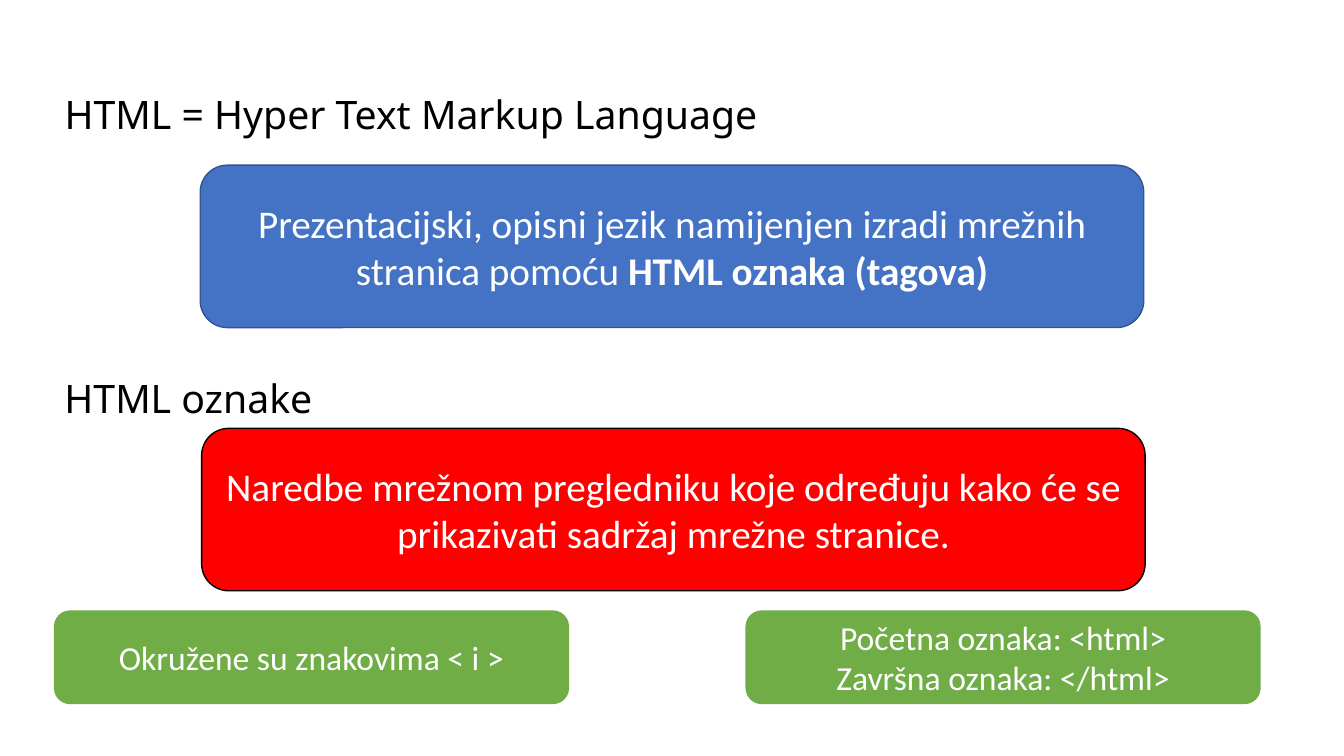
from pptx import Presentation
from pptx.dml.color import RGBColor
from pptx.enum.shapes import MSO_SHAPE
from pptx.enum.text import MSO_ANCHOR, MSO_AUTO_SIZE, PP_ALIGN
from pptx.util import Pt

# Content: paragraphs are lists of (text, bold) runs
TITLE = "HTML = Hyper Text Markup Language"
SUBTITLE = "HTML oznake"
DEFINITION = [[
    ("Prezentacijski, opisni jezik namijenjen izradi mrežnih stranica pomoću ", False),
    ("HTML oznaka (tagova)", True),
]]
TAGS = [[("Naredbe mrežnom pregledniku koje određuju kako će se "
          "prikazivati sadržaj mrežne stranice.", False)]]
BRACKETS = [[("Okružene su znakovima < i >", False)]]
EXAMPLES = [[("Početna oznaka: <html>", False)],
            [("Završna oznaka: </html>", False)]]

THEME = {
    "heading_font": "Noto Sans", "body_font": "Calibri",
    "large": 28, "small": 24,
    "ink": "000000", "white": "FFFFFF",
    "blue": "4472C4", "navy": "325491", "red": "FF0000", "green": "70AD47",
}

# Layout in points
SLIDE_W, SLIDE_H = 960, 540
LEFT = 39
HEADING_W, HEADING_H = 828, 44
TITLE_Y, SUBTITLE_Y = 65, 268
MAIN_W, MAIN_H = 674, 116
NOTE_W, NOTE_H, NOTE_Y = 367, 66, 436.5

# left, top, width, height, fill, line, size, paragraphs
CARDS = [
    (143, 118, MAIN_W, MAIN_H, "blue", "navy", "large", DEFINITION),
    (144, 306, MAIN_W, MAIN_H, "red", "ink", "large", TAGS),
    (LEFT, NOTE_Y, NOTE_W, NOTE_H, "green", "green", "small", BRACKETS),
    (533, NOTE_Y, NOTE_W, NOTE_H, "green", "green", "small", EXAMPLES),
]


def color(name):
    return RGBColor.from_string(THEME[name])


def style(p, font, size, ink, align):
    p.alignment = align
    p.font.name = THEME[font]
    p.font.size = Pt(THEME[size])
    p.font.color.rgb = color(ink)


def format_heading(sp, text, top):
    sp.left, sp.top = Pt(LEFT), Pt(top)
    sp.width, sp.height = Pt(HEADING_W), Pt(HEADING_H)
    tf = sp.text_frame
    tf.text = text
    tf.word_wrap = True
    tf.auto_size = MSO_AUTO_SIZE.NONE
    tf.vertical_anchor = MSO_ANCHOR.TOP
    p = tf.paragraphs[0]
    p.line_spacing = 0.9
    style(p, "heading_font", "large", "ink", PP_ALIGN.LEFT)


def add_card(s, left, top, width, height, fill, line, size, paragraphs):
    sp = s.shapes.add_shape(MSO_SHAPE.ROUNDED_RECTANGLE,
                            Pt(left), Pt(top), Pt(width), Pt(height))
    sp.shadow.inherit = False
    sp.fill.solid()
    sp.fill.fore_color.rgb = color(fill)
    sp.line.color.rgb = color(line)
    sp.line.width = Pt(1)
    tf = sp.text_frame
    tf.word_wrap = True
    tf.vertical_anchor = MSO_ANCHOR.MIDDLE
    for i, runs in enumerate(paragraphs):
        p = tf.add_paragraph() if i else tf.paragraphs[0]
        style(p, "body_font", size, "white", PP_ALIGN.CENTER)
        for text, bold in runs:
            r = p.add_run()
            r.text = text
            if bold:
                r.font.bold = True


def main():
    prs = Presentation()
    prs.slide_width, prs.slide_height = Pt(SLIDE_W), Pt(SLIDE_H)
    s = prs.slides.add_slide(prs.slide_layouts[5])

    # Headings
    format_heading(s.shapes.title, TITLE, TITLE_Y)
    format_heading(s.shapes.add_textbox(0, 0, 0, 0), SUBTITLE, SUBTITLE_Y)

    # Cards
    for card in CARDS:
        add_card(s, *card)

    prs.save("out.pptx")


if __name__ == "__main__":
    main()
